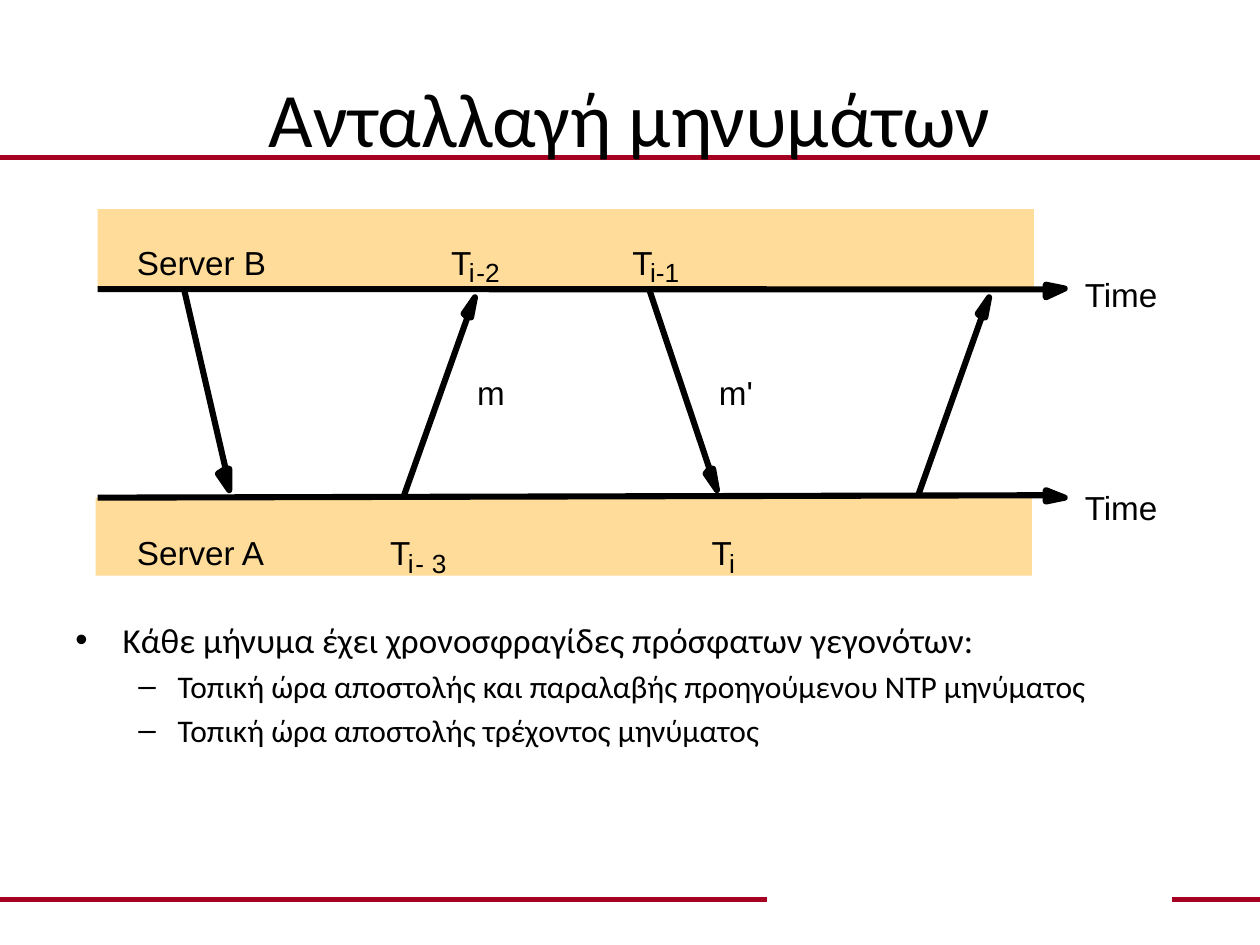
from dataclasses import dataclass

from lxml import etree
from pptx import Presentation
from pptx import util as u
from pptx.dml.color import RGBColor
from pptx.enum import shapes, text
from pptx.oxml import ns

Point = tuple[float, float]
BLACK, CRIMSON, SAND = "000000", "A50021", "FFDC99"

# Arrowhead outlines, as offsets from the tip
UP = [(-4.3, 11.5), (-6.5, 9.4), (0, 0), (-2.2, 11.5)]
DOWN_STEEP = [(-2.2, -12.2), (0, -12.2), (0, 0), (-6.5, -9.4)]
DOWN = [(-4.3, -12.2), (-2.2, -12.2), (0, 0), (-6.5, -9.4)]
RIGHT_UPPER = [(-10.8, 0), (-10.8, -2.2), (0, 0), (-10.8, 5)]
RIGHT_LOWER = [(-10.8, 0), (-10.8, -4.3), (0, 0), (-10.8, 2.2)]


@dataclass
class Arrow:
    start: Point
    end: Point
    tip: Point
    head: list[Point]


@dataclass
class Label:
    words: str
    left: float
    top: float
    width: float
    size: float = 19


@dataclass
class Bullet:
    words: str
    mark: str
    level: int
    margin: float
    hanging: float
    size: float
    space_before: float


MESSAGES = [
    Arrow((524.2, 284.4), (560.9, 181.4), (565.2, 169.9), UP),
    Arrow((370.8, 164.9), (405.4, 267.8), (409.7, 280.1), DOWN),
    Arrow((230.4, 284.4), (267.1, 181.4), (271.4, 169.9), UP),
    Arrow((105.1, 164.9), (128.9, 267.8), (131, 280.1), DOWN_STEEP),
]
TIME_AXES = [
    Arrow((55.8, 165.2), (597.6, 165.4), (608.4, 164.9), RIGHT_UPPER),
    Arrow((55.8, 284.4), (599, 283), (608.4, 284.4), RIGHT_LOWER),
]
ROW_B, ROW_A, ROW_MESSAGE = 138.2, 304.2, 212.8
LABELS = [
    Label("Server B", 78.3, ROW_B, 74.2),
    Label("Server A", 78.3, ROW_A, 74.2),
    Label("Time", 619.9, 157, 42.5),
    Label("Time", 619.9, 278.6, 42.5),
    Label("m", 272.6, ROW_MESSAGE, 16),
    Label("m'", 410.8, ROW_MESSAGE, 19.6),
]
# Each timestamp: left, top, subscript pieces as (text, offset, width)
TIMESTAMPS = [
    (406.6, ROW_A, [("i", 10.1, 3.6)]),
    (361.4, ROW_B, [("i-1", 10.1, 18)]),
    (257.8, ROW_B, [("i", 10.1, 3.6), ("-2", 14.4, 14)]),
    (223, ROW_A, [("i", 10.1, 3.6), ("-", 14.4, 5.2), ("3", 23.8, 8.6)]),
]
BULLETS = [
    Bullet("Κάθε μήνυμα έχει χρονοσφραγίδες πρόσφατων γεγονότων:",
           "•", 0, 27, 27, 20, 0),
    Bullet("Τοπική ώρα αποστολής και παραλαβής προηγούμενου NTP μηνύματος",
           "–", 1, 58.5, 22.5, 18, 3.6),
    Bullet("Τοπική ώρα αποστολής τρέχοντος μηνύματος",
           "–", 1, 58.5, 22.5, 18, 3.6),
]


def colour(value: str) -> RGBColor:
    return RGBColor.from_string(value)


def set_fill(shape, value: str) -> None:
    shape.shadow.inherit = False
    shape.fill.solid()
    shape.fill.fore_color.rgb = colour(value)


def set_line(shape, value: str, width: float) -> None:
    shape.line.color.rgb = colour(value)
    shape.line.width = u.Pt(width)


def set_font(paragraph, name: str, size: float) -> None:
    paragraph.font.name = name
    paragraph.font.size = u.Pt(size)
    paragraph.font.color.rgb = colour(BLACK)


def draw_line(slide, start: Point, end: Point, value: str, width: float) -> None:
    connector = slide.shapes.add_connector(
        shapes.MSO_CONNECTOR.STRAIGHT, *map(u.Pt, start + end))
    set_line(connector, value, width)
    etree.SubElement(connector._element.spPr, ns.qn("a:effectLst"))


def draw_arrow(slide, arrow: Arrow) -> None:
    tip_x, tip_y = arrow.tip
    outline = [(u.Pt(tip_x + x), u.Pt(tip_y + y)) for x, y in arrow.head]
    builder = slide.shapes.build_freeform(*outline[0])
    builder.add_line_segments(outline[1:], close=True)
    head = builder.convert_to_shape()
    set_fill(head, BLACK)
    set_line(head, BLACK, 3.5)
    draw_line(slide, arrow.start, arrow.end, BLACK, 3.5)


def draw_band(slide, left: float, top: float) -> None:
    band = slide.shapes.add_shape(
        shapes.MSO_SHAPE.RECTANGLE, *map(u.Pt, (left, top, 535, 44.6)))
    set_fill(band, SAND)
    band.line.fill.background()


def add_text_frame(slide, left: float, top: float, width: float, height: float):
    box = slide.shapes.add_textbox(*map(u.Pt, (left, top, width, height)))
    box.text_frame.word_wrap = True
    return box.text_frame


def draw_label(slide, label: Label) -> None:
    frame = add_text_frame(slide, label.left, label.top, label.width, label.size * 1.2)
    frame.word_wrap = False
    frame.auto_size = text.MSO_AUTO_SIZE.SHAPE_TO_FIT_TEXT
    frame.margin_left = frame.margin_right = 0
    frame.margin_top = frame.margin_bottom = 0
    paragraph = frame.paragraphs[0]
    paragraph.text = label.words
    set_font(paragraph, "Arial", label.size)


def draw_timestamp(slide, left: float, top: float, pieces: list) -> None:
    draw_label(slide, Label("T", left, top, 11.6))
    for words, offset, width in pieces:
        draw_label(slide, Label(words, left + offset, top + 8.3, width, 15))


def write_bullet(paragraph, bullet: Bullet) -> None:
    paragraph.text = bullet.words
    paragraph.level = bullet.level
    properties = paragraph._p.get_or_add_pPr()
    properties.set("marL", str(u.Pt(bullet.margin)))
    properties.set("indent", str(-u.Pt(bullet.hanging)))
    etree.SubElement(properties, ns.qn("a:buFont")).set("typeface", "Arial")
    etree.SubElement(properties, ns.qn("a:buChar")).set("char", bullet.mark)
    paragraph.space_before = u.Pt(bullet.space_before)
    set_font(paragraph, "Calibri", bullet.size)


def main() -> None:
    presentation = Presentation()
    presentation.slide_width, presentation.slide_height = u.Pt(720), u.Pt(540)
    slide = presentation.slides.add_slide(presentation.slide_layouts[6])

    # Rules across the slide
    for left, right, y in [(669.6, 720, 514), (0, 438.5, 514), (0, 720, 90)]:
        draw_line(slide, (left, y), (right, y), CRIMSON, 3)

    # Title
    title = add_text_frame(slide, 36, 21.6, 648, 90)
    title.vertical_anchor = text.MSO_ANCHOR.MIDDLE
    heading = title.paragraphs[0]
    heading.text = "Ανταλλαγή μηνυμάτων"
    heading.alignment = text.PP_ALIGN.CENTER
    set_font(heading, "Calibri", 44)

    # Explanation
    body = add_text_frame(slide, 36, 350, 648, 132)
    for index, bullet in enumerate(BULLETS):
        write_bullet(body.add_paragraph() if index else body.paragraphs[0], bullet)

    # Message exchange diagram
    for message in MESSAGES:
        draw_arrow(slide, message)
    draw_band(slide, 54.7, 284.4)
    draw_band(slide, 55.8, 119.5)
    for axis in TIME_AXES:
        draw_arrow(slide, axis)
    for timestamp in TIMESTAMPS:
        draw_timestamp(slide, *timestamp)
    for label in LABELS:
        draw_label(slide, label)

    presentation.save("out.pptx")


if __name__ == "__main__":
    main()
